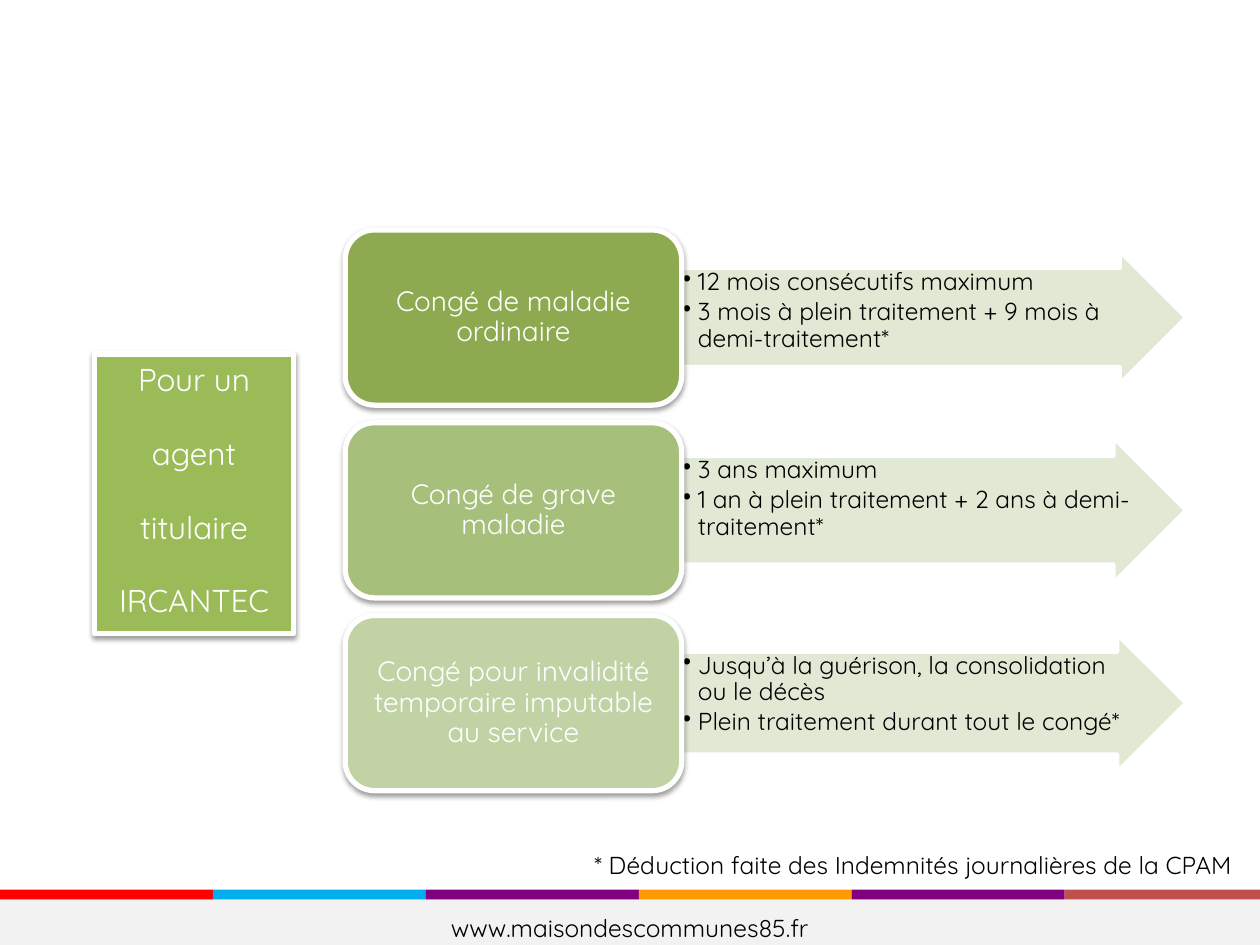
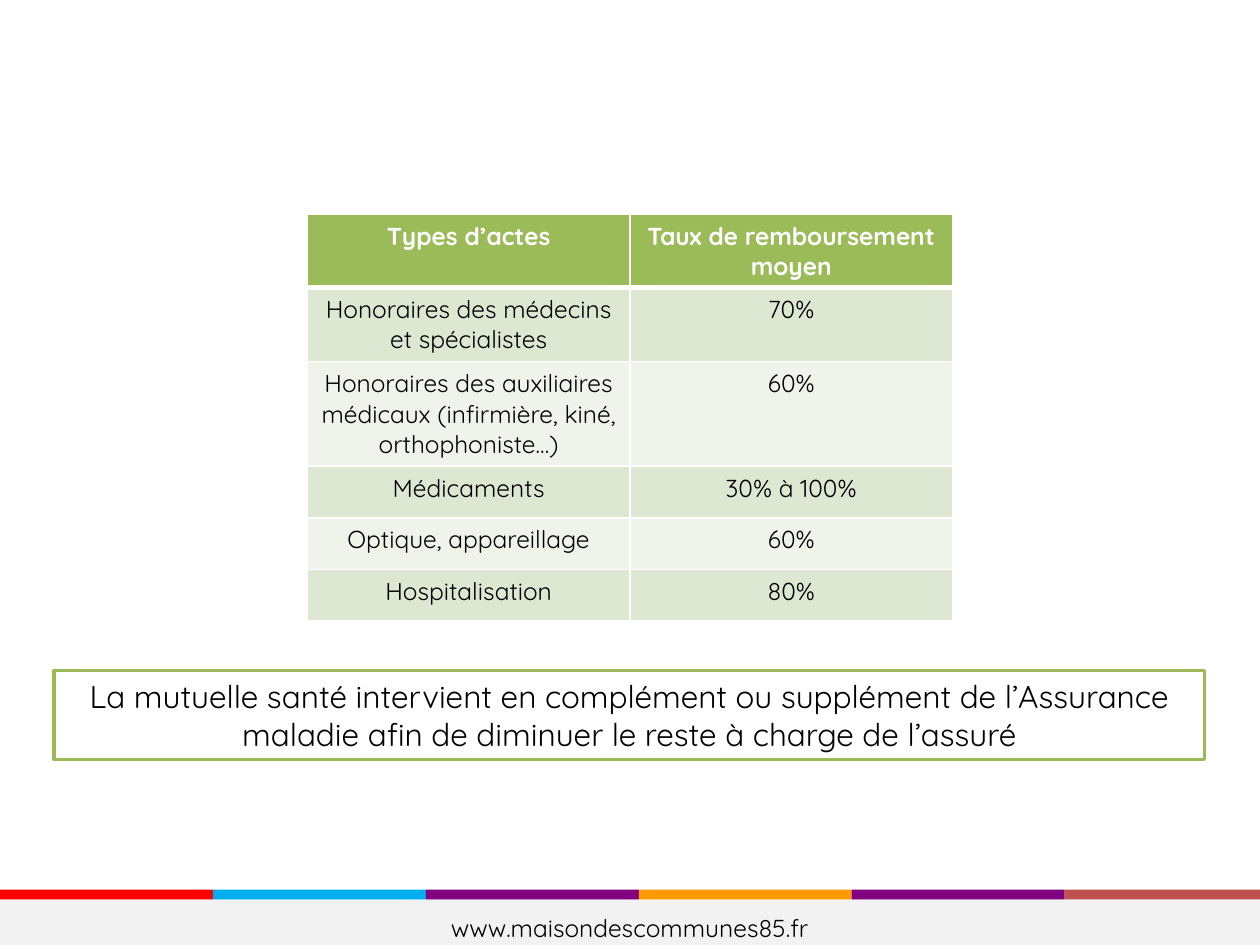
from lxml import etree
from pptx import Presentation
from pptx.dml.color import RGBColor
from pptx.enum import shapes, text
from pptx.oxml import ns
from pptx.util import Inches, Pt

FONT = "Quicksand"
BLACK = RGBColor(0x00, 0x00, 0x00)
WHITE = RGBColor(0xFF, 0xFF, 0xFF)
GREEN = RGBColor(0x9B, 0xBB, 0x59)
PALE_GREEN = RGBColor(0xDE, 0xE7, 0xD1)
FAINT_GREEN = RGBColor(0xEF, 0xF3, 0xEA)
FOOTER_GREY = RGBColor(0xF2, 0xF2, 0xF2)
PURPLE = RGBColor(0x80, 0x00, 0x80)
BAND_COLOURS = [
    RGBColor(0xFF, 0x00, 0x00), RGBColor(0x00, 0xAE, 0xEF), PURPLE,
    RGBColor(0xFF, 0x99, 0x00), PURPLE, RGBColor(0xC0, 0x50, 0x4D),
]
SLIDE_W, SLIDE_H, BAND_W = 10, 7.5, 1.69

# Leave type, box colour, arrow height, conditions
LEAVES = [
    ("Congé de maladie ordinaire", RGBColor(0x8D, 0xAA, 0x51), 1.04,
     ["12 mois consécutifs maximum",
      "3 mois à plein traitement + 9 mois à demi-traitement*"]),
    ("Congé de grave maladie", RGBColor(0xA6, 0xBF, 0x7A), 1.14,
     ["3 ans maximum",
      "1 an à plein traitement + 2 ans à demi-traitement*"]),
    ("Congé pour invalidité temporaire imputable au service",
     RGBColor(0xC1, 0xD3, 0xA5), 1.08,
     ["Jusqu’à la guérison, la consolidation ou le décès",
      "Plein traitement durant tout le congé*"]),
]

# Row height, then the two cells
REFUND_ROWS = [
    (0.58, "Types d’actes", "Taux de remboursement moyen"),
    (0.59, "Honoraires des médecins et spécialistes", "70%"),
    (0.83, "Honoraires des auxiliaires médicaux (infirmière, kiné, orthophoniste…)", "60%"),
    (0.41, "Médicaments", "30% à 100%"),
    (0.41, "Optique, appareillage", "60%"),
    (0.41, "Hospitalisation", "80%"),
]


def sub(parent, tag, **attrs):
    return etree.SubElement(parent, ns.qn(tag), {k: str(v) for k, v in attrs.items()})


class Deck:
    """Holds the house style and the slide being filled."""

    def __init__(self):
        self.prs = Presentation()
        self.prs.slide_width = Inches(SLIDE_W)
        self.prs.slide_height = Inches(SLIDE_H)
        self.s = None

    def new_slide(self):
        """Start a slide with the coloured bands and the footer."""
        self.s = self.prs.slides.add_slide(self.prs.slide_layouts[6])
        for i, colour in enumerate(BAND_COLOURS):
            left = i * BAND_W
            self.shape(left, 7.06, min(BAND_W, SLIDE_W - left), 0.08, colour)
        footer = self.shape(0, 7.14, SLIDE_W, 0.44, FOOTER_GREY)
        self.add_text(footer.text_frame, ["www.maisondescommunes85.fr"])

    def shape(self, left, top, width, height, fill, line=None, line_width=3,
              kind=shapes.MSO_SHAPE.RECTANGLE):
        sp = self.s.shapes.add_shape(
            kind, Inches(left), Inches(top), Inches(width), Inches(height))
        sp.shadow.inherit = False
        sp.fill.solid()
        sp.fill.fore_color.rgb = fill
        if line is None:
            sp.line.fill.background()
        else:
            sp.line.color.rgb = line
            sp.line.width = Pt(line_width)
        return sp

    def add_shadow(self, sp):
        effects = sp._element.spPr.find(ns.qn("a:effectLst"))
        shadow = sub(effects, "a:outerShdw", blurRad=Pt(3.1), dist=Pt(1.6),
                     dir=90 * 60000, rotWithShape=0)
        sub(sub(shadow, "a:srgbClr", val=BLACK), "a:alpha", val=38000)

    def add_text(self, tf, lines, size=14, colour=BLACK, align=text.PP_ALIGN.CENTER,
                 anchor=text.MSO_ANCHOR.MIDDLE, insets=(0.1, 0.05),
                 gap=0, spacing=1.0, bullet=False):
        tf.word_wrap = True
        tf.vertical_anchor = anchor
        tf.margin_left = tf.margin_right = Inches(insets[0])
        tf.margin_top = tf.margin_bottom = Inches(insets[1])
        for i, line in enumerate(lines):
            p = tf.add_paragraph() if i else tf.paragraphs[0]
            if bullet:
                pPr = p._p.get_or_add_pPr()
                pPr.set("marL", str(Inches(0.12)))
                pPr.set("indent", str(-Inches(0.12)))
                sub(pPr, "a:buChar", char="•")
            p.alignment = align
            p.line_spacing = spacing
            if i:
                p.space_before = Pt(gap)
            self.add_run(p, line, size, colour)

    def add_run(self, p, words, size, colour, bold=False):
        r = p.add_run()
        r.text = words
        r.font.name = FONT
        r.font.size = Pt(size)
        r.font.bold = bold
        r.font.color.rgb = colour

    def leave_row(self, centre, name, colour, arrow_height, conditions):
        """Draw one leave type and the arrow with its conditions."""
        arrow = self.shape(5.41, centre - arrow_height / 2, 4, arrow_height,
                           PALE_GREEN, WHITE, 2, shapes.MSO_SHAPE.RIGHT_ARROW)
        arrow.adjustments[0] = 0.75
        fill = arrow._element.spPr.find(ns.qn("a:solidFill"))
        sub(fill[0], "a:alpha", val=90000)
        self.add_text(arrow.text_frame, conditions, align=text.PP_ALIGN.LEFT,
                      anchor=text.MSO_ANCHOR.TOP, insets=(0.01, 0.01), gap=2,
                      spacing=0.9, bullet=True)
        box = self.shape(2.74, centre - 0.695, 2.67, 1.39, colour, WHITE,
                         kind=shapes.MSO_SHAPE.ROUNDED_RECTANGLE)
        self.add_shadow(box)
        self.add_text(box.text_frame, [name], 16, WHITE, insets=(0.07, 0.03), spacing=0.9)

    def table(self, left, top, width, rows):
        heights = [row[0] for row in rows]
        frame = self.s.shapes.add_table(
            len(rows), 2, Inches(left), Inches(top), Inches(width), Inches(sum(heights)))
        for i, (height, *words) in enumerate(rows):
            frame.table.rows[i].height = Inches(height)
            for j, entry in enumerate(words):
                self.cell(frame.table.cell(i, j), entry, i)

    def cell(self, cell, words, row):
        header = row == 0
        tcPr = cell._tc.get_or_add_tcPr()
        for side in "LRTB":
            thick = (header and side == "B") or (row == 1 and side == "T")
            ln = sub(tcPr, f"a:ln{side}", w=Pt(3 if thick else 1))
            sub(sub(ln, "a:solidFill"), "a:srgbClr", val=WHITE)
        cell.fill.solid()
        cell.fill.fore_color.rgb = (
            GREEN if header else PALE_GREEN if row % 2 else FAINT_GREEN)
        cell.vertical_anchor = text.MSO_ANCHOR.TOP
        p = cell.text_frame.paragraphs[0]
        p.alignment = text.PP_ALIGN.CENTER
        self.add_run(p, words, 14, WHITE if header else BLACK, header)

    def note(self, left, top, width, height, words):
        sp = self.s.shapes.add_textbox(
            Inches(left), Inches(top), Inches(width), Inches(height))
        self.add_text(sp.text_frame, [words], align=text.PP_ALIGN.RIGHT,
                      anchor=text.MSO_ANCHOR.TOP)


def leave_slide(deck):
    deck.new_slide()
    for i, leave in enumerate(LEAVES):
        deck.leave_row(2.52 + i * 1.53, *leave)
    agent = deck.shape(0.75, 2.81, 1.58, 2.22, GREEN, WHITE)
    deck.add_shadow(agent)
    deck.add_text(agent.text_frame, ["Pour un", "agent", "titulaire", "IRCANTEC"],
                  18, WHITE, anchor=text.MSO_ANCHOR.TOP, gap=20.5)
    deck.note(1.38, 6.7, 8.5, 0.34,
              "* Déduction faite des Indemnités journalières de la CPAM")


def refund_slide(deck):
    deck.new_slide()
    deck.table(2.44, 1.7, 5.12, REFUND_ROWS)
    message = deck.shape(0.43, 5.32, 9.13, 0.71, WHITE, GREEN, 2)
    deck.add_text(message.text_frame, [
        "La mutuelle santé intervient en complément ou supplément de l’Assurance "
        "maladie afin de diminuer le reste à charge de l’assuré"], 18)


def main():
    deck = Deck()
    leave_slide(deck)
    refund_slide(deck)
    deck.prs.save("out.pptx")


if __name__ == "__main__":
    main()
